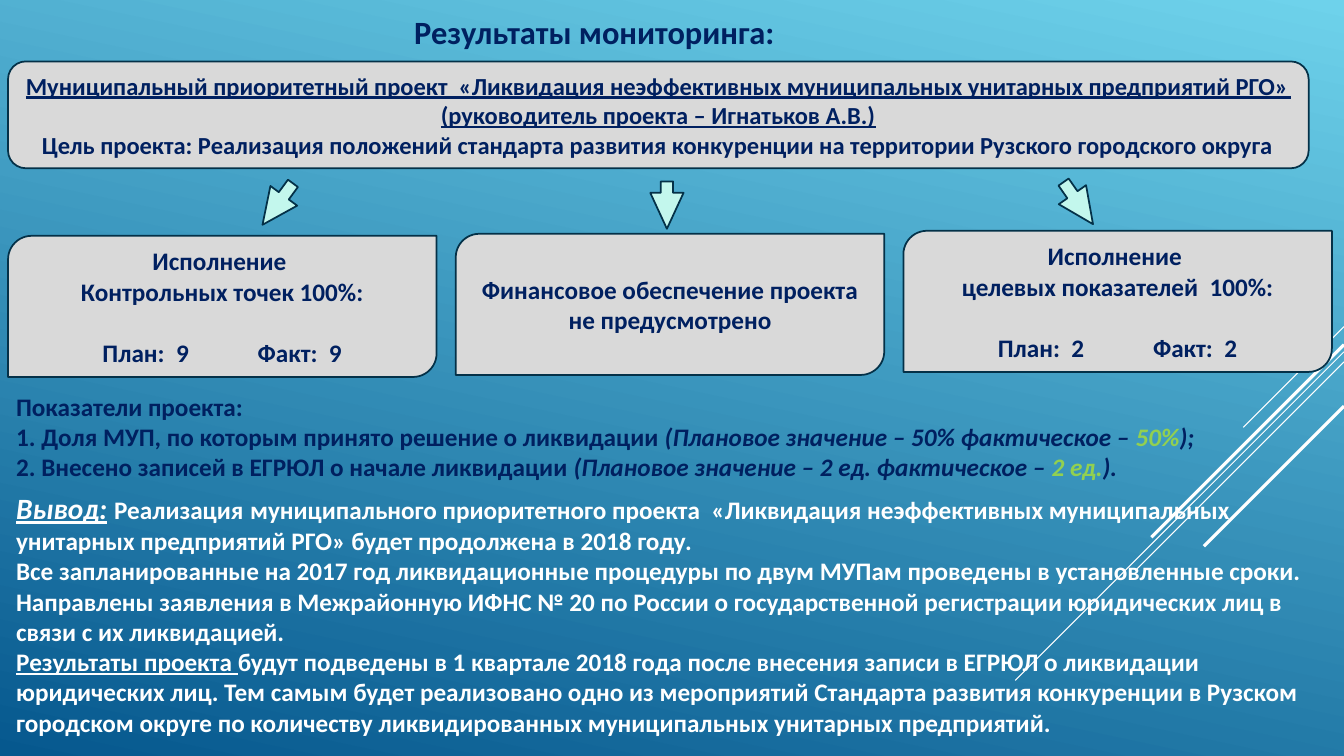
from lxml.etree import SubElement
from pptx import Presentation
from pptx.dml.color import RGBColor
from pptx.enum.shapes import MSO_CONNECTOR, MSO_SHAPE
from pptx.enum.text import MSO_ANCHOR, MSO_AUTO_SIZE, PP_ALIGN
from pptx.oxml.ns import qn
from pptx.util import Inches, Pt

SKY = RGBColor(0x6E, 0xD2, 0xEB)
DEEP = RGBColor(0x06, 0x58, 0x8E)
NAVY = RGBColor(0x00, 0x20, 0x60)
WHITE = RGBColor(0xFF, 0xFF, 0xFF)
GREEN = RGBColor(0x92, 0xD0, 0x50)
GREY = RGBColor(0xD9, 0xD9, 0xD9)
MINT = RGBColor(0xC3, 0xF7, 0xED)
EDGE = RGBColor(0x04, 0x31, 0x48)


def style(run, size, color, marks=""):
    font = run.font
    font.name = "Calibri"
    font.size = Pt(size)
    font.bold = True
    font.italic = "i" in marks
    font.underline = "u" in marks
    font.color.rgb = color


def write(para, parts):
    for text, size, color, marks in parts:
        run = para.add_run()
        run.text = text
        style(run, size, color, marks)


def paint_back(slide):
    fill = slide.background.fill
    fill.gradient()
    fill.gradient_angle = 258
    for stop, color in zip(fill.gradient_stops, (SKY, DEEP)):
        stop.color.rgb = color


def draw_rays(slide, right, rays):
    for top, reach, width in rays:
        ray = slide.shapes.add_connector(
            MSO_CONNECTOR.STRAIGHT, Inches(right), Inches(top),
            Inches(right - reach), Inches(top + reach))
        ray.line.color.rgb = WHITE
        ray.line.width = Pt(width)
        SubElement(ray._element.spPr, qn("a:effectLst"))


def set_title(slide, box, text):
    title = slide.shapes.title
    title.left, title.top, title.width, title.height = map(Inches, box)
    frame = title.text_frame
    frame.text = text
    frame.auto_size = MSO_AUTO_SIZE.NONE
    frame.vertical_anchor = MSO_ANCHOR.MIDDLE
    para = frame.paragraphs[0]
    para.alignment = PP_ALIGN.CENTER
    style(para.runs[0], 23.2, NAVY)


def add_form(slide, kind, box, color):
    form = slide.shapes.add_shape(kind, *map(Inches, box))
    form.shadow.inherit = False
    form.fill.solid()
    form.fill.fore_color.rgb = color
    form.line.color.rgb = EDGE
    form.line.width = Pt(1.25)
    return form


def add_panel(slide, kind, box, lines, size, marks=()):
    frame = add_form(slide, kind, box, GREY).text_frame
    frame.word_wrap = True
    frame.vertical_anchor = MSO_ANCHOR.MIDDLE
    frame.text = "\n".join(lines)
    for num, para in enumerate(frame.paragraphs):
        para.alignment = PP_ALIGN.CENTER
        style(para.runs[0], size, NAVY, marks[num] if marks else "")
    return frame


def add_head(slide, box):
    frame = add_panel(slide, MSO_SHAPE.ROUNDED_RECTANGLE, box, [
        "Муниципальный приоритетный проект  «Ликвидация неэффективных муниципальных "
        "унитарных предприятий РГО» (руководитель проекта – Игнатьков А.В.)",
        "Цель проекта: Реализация положений стандарта развития конкуренции "
        "на территории Рузского городского округа"], 17.5, ("u", ""))
    frame.margin_left = frame.margin_right = Inches(0.07)


def add_card(slide, box, lines, score=None):
    frame = add_panel(slide, MSO_SHAPE.ROUND_2_DIAG_RECTANGLE, box, lines, 18)
    if score:
        para = frame.add_paragraph()
        para.alignment = PP_ALIGN.LEFT
        para.space_before = Pt(22)
        write(para, [(f"\tПлан:  {score}\tФакт:  {score}", 18, NAVY, "")])
        tabs = SubElement(para._p.get_or_add_pPr(), qn("a:tabLst"))
        for spot in (0.77, 2.31):
            SubElement(tabs, qn("a:tab"), pos=str(Inches(spot)), algn="l")


def add_arrow(slide, box, turn):
    arrow = add_form(slide, MSO_SHAPE.DOWN_ARROW, box, MINT)
    arrow.adjustments[0] = 0.371
    arrow.adjustments[1] = 1.081
    arrow.rotation = turn


def add_notes(slide, box):
    frame = slide.shapes.add_textbox(*map(Inches, box)).text_frame
    frame.word_wrap = True
    frame.margin_left = Inches(0.16)
    rows = [
        [("Показатели проекта:", 18, NAVY, "")],
        [("1. Доля МУП, по которым принято решение о ликвидации ", 18, NAVY, ""),
         ("(Плановое значение – 50% фактическое – ", 18, NAVY, "i"),
         ("50%", 18, GREEN, "i"), (");", 18, NAVY, "i")],
        [("2. Внесено записей в ЕГРЮЛ о начале ликвидации ", 18, NAVY, ""),
         ("(Плановое значение – 2 ед. фактическое – ", 18, NAVY, "i"),
         ("2 ед.", 18, GREEN, "i"), (").", 18, NAVY, "i")],
        [("Вывод:", 21, WHITE, "iu"), (" ", 21, WHITE, "i"),
         ("Реализация", 18, WHITE, ""), (" ", 21, WHITE, ""),
         ("муниципального приоритетного проекта  «Ликвидация неэффективных "
          "муниципальных унитарных предприятий РГО» будет продолжена в 2018 году.",
          18, WHITE, "")],
        [("Все запланированные на 2017 год ликвидационные процедуры по двум МУПам "
          "проведены в установленные сроки. Направлены заявления в Межрайонную ИФНС "
          "№ 20 по России о государственной регистрации юридических лиц в связи "
          "с их ликвидацией.", 18, WHITE, "")],
        [("Результаты проекта ", 18, WHITE, "u"),
         ("будут подведены в 1 квартале 2018 года после внесения записи в ЕГРЮЛ "
          "о ликвидации юридических лиц. Тем самым будет реализовано одно из "
          "мероприятий Стандарта развития конкуренции в Рузском городском округе "
          "по количеству ликвидированных муниципальных унитарных предприятий.",
          18, WHITE, "")]]
    for num, parts in enumerate(rows):
        para = frame.add_paragraph() if num else frame.paragraphs[0]
        write(para, parts)
    frame.paragraphs[3].space_before = Pt(6)


def main():
    deck = Presentation()
    deck.slide_width, deck.slide_height = Inches(13.33), Inches(7.5)
    slide = deck.slides.add_slide(deck.slide_layouts[5])
    paint_back(slide)
    draw_rays(slide, 13.33, [
        (3.24, 1, 0.75), (3.49, 3.26, 0.75), (3.59, 2.07, 0.75),
        (3.42, 1.91, 2.25), (4.03, 1.39, 2.25)])
    set_title(slide, (1.23, 0.1, 9.33, 0.42), "Результаты мониторинга:")
    add_notes(slide, (0, 3.83, 13.33, 3.67))
    add_head(slide, (0.08, 0.61, 12.9, 1.06))
    cards = [
        (2.34, ["Исполнение ", "Контрольных точек 100%:"], 9),
        (2.32, ["Финансовое обеспечение проекта не предусмотрено"], None),
        (2.29, ["Исполнение ", "целевых показателей  100%:"], 2)]
    for num, (top, lines, score) in enumerate(cards):
        add_card(slide, (0.08 + 4.44 * num, top, 4.25, 1.4), lines, score)
    for left, top, tall, turn in [
            (2.59, 1.77, 0.51, 36.3), (6.45, 1.8, 0.47, 0), (10.53, 1.76, 0.51, 325.1)]:
        add_arrow(slide, (left, top, 0.33, tall), turn)
    deck.save("out.pptx")


if __name__ == "__main__":
    main()
